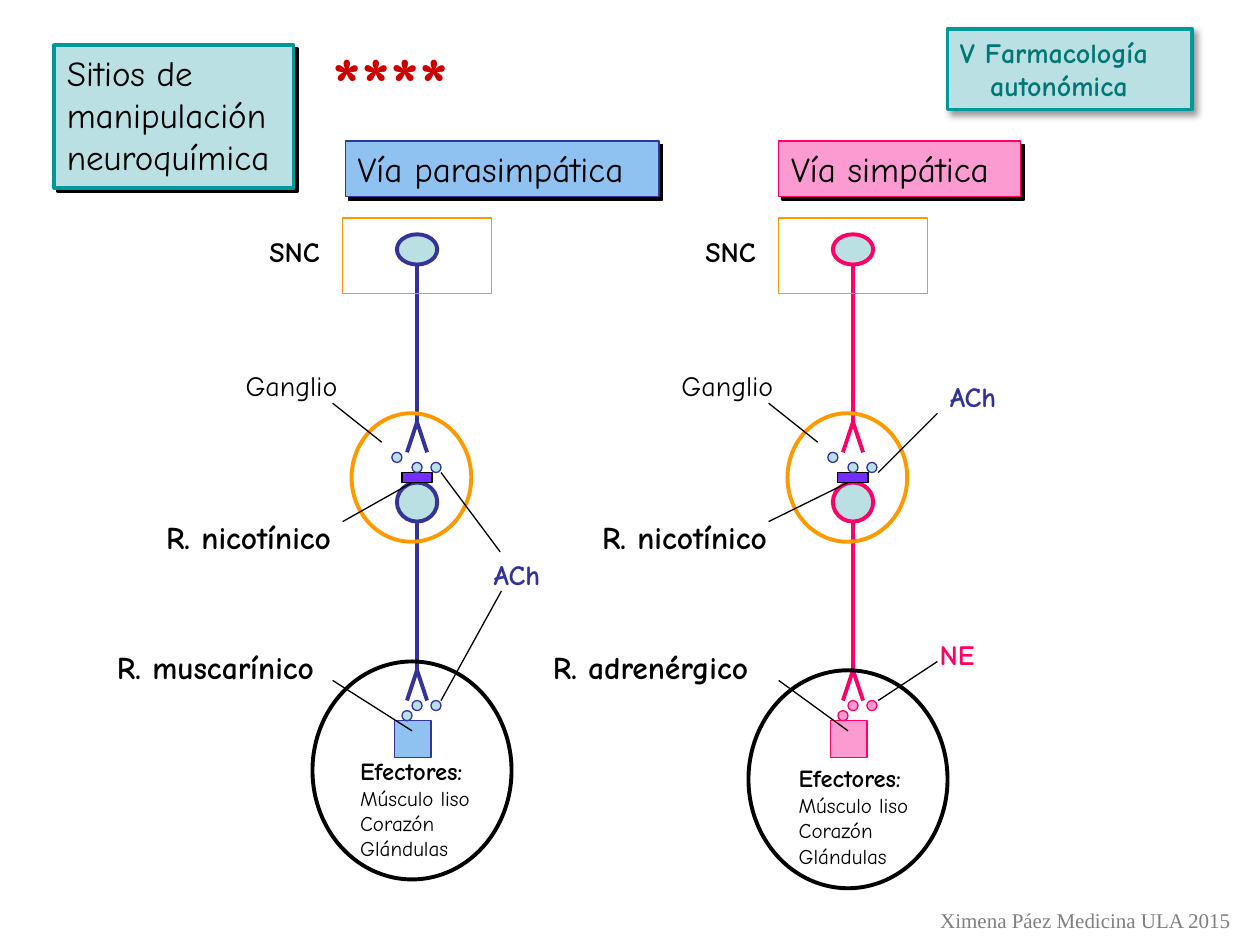
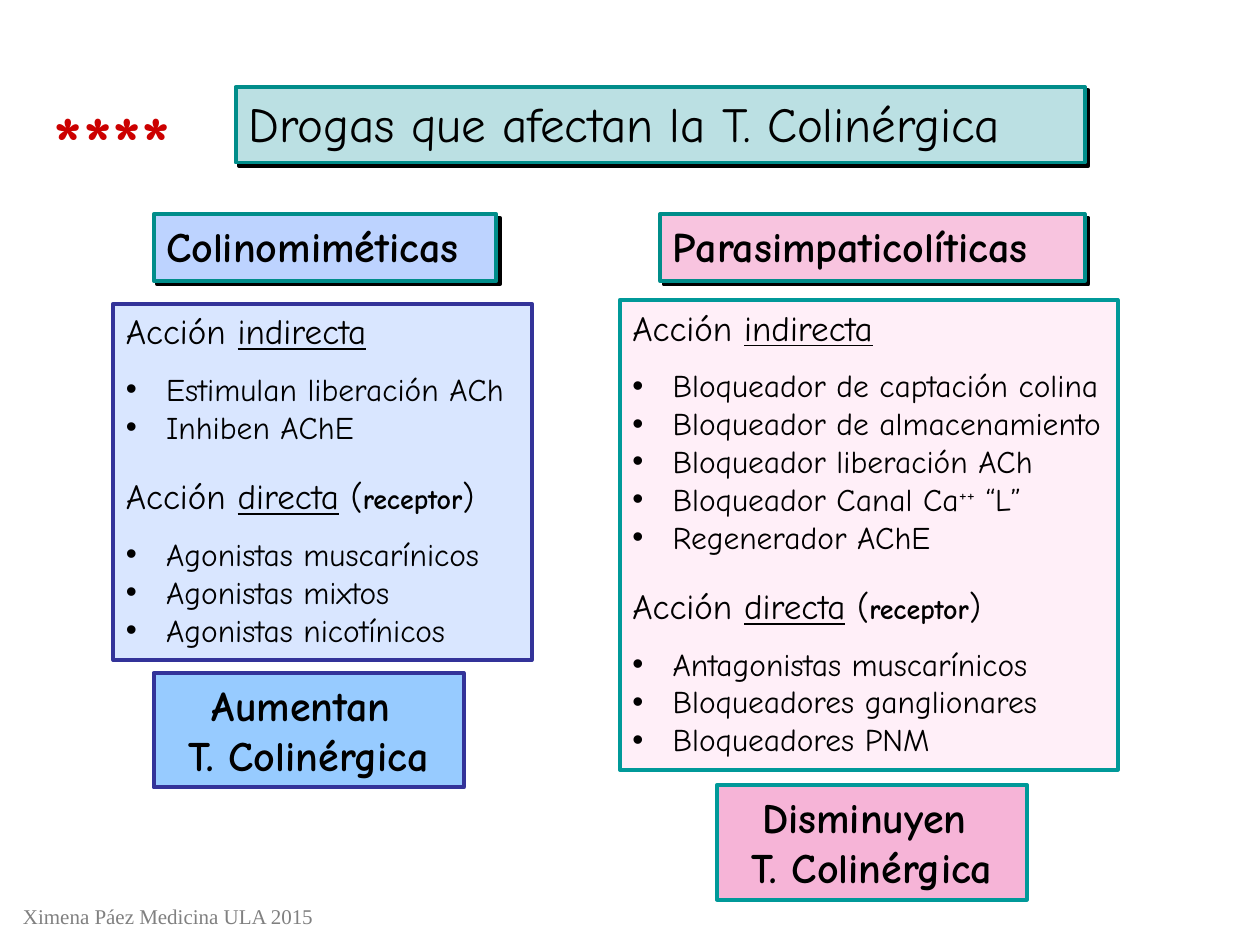
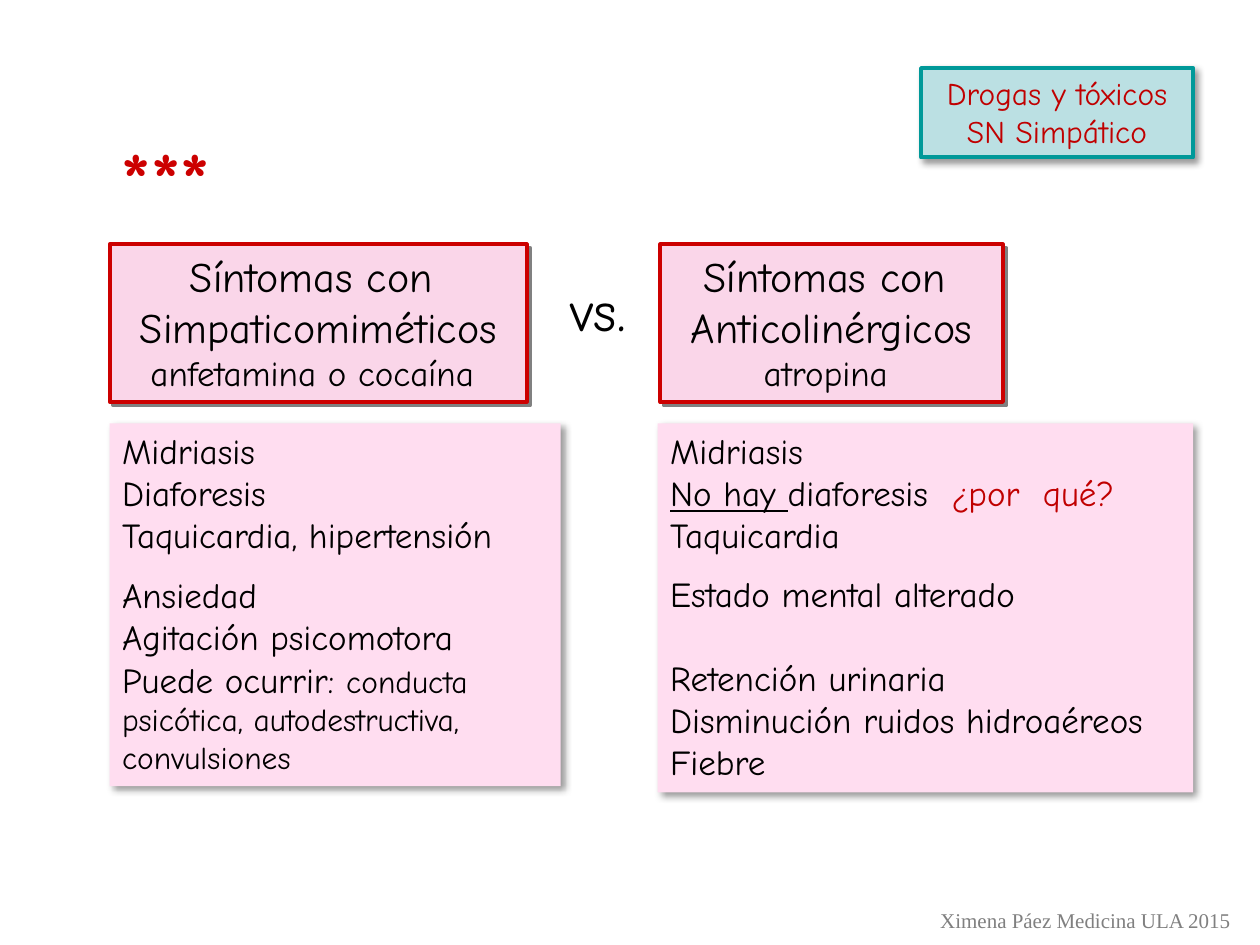
"""Build three slides on autonomic pathways and the drugs that act on them."""
from dataclasses import dataclass

from lxml import etree
from pptx import Presentation
from pptx.dml.color import RGBColor
from pptx.enum.shapes import MSO_CONNECTOR, MSO_SHAPE
from pptx.enum.text import MSO_ANCHOR, MSO_AUTO_SIZE, PP_ALIGN
from pptx.oxml.ns import qn
from pptx.util import Inches, Pt

BLACK = RGBColor(0x00, 0x00, 0x00)
GRAY = RGBColor(0x80, 0x80, 0x80)
RED = RGBColor(0xCC, 0x00, 0x00)
DARK_RED = RGBColor(0xC0, 0x00, 0x00)
TEAL = RGBColor(0x00, 0x99, 0x99)
DEEP_TEAL = RGBColor(0x00, 0x8D, 0x8A)
TEXT_TEAL = RGBColor(0x00, 0x77, 0x74)
PALE_TEAL = RGBColor(0xBB, 0xE0, 0xE3)
NAVY = RGBColor(0x33, 0x33, 0x99)
ORANGE = RGBColor(0xFF, 0x99, 0x00)
VIOLET = RGBColor(0x73, 0x2D, 0xFF)
MAGENTA = RGBColor(0xFF, 0x00, 0x66)
SKY = RGBColor(0x8F, 0xC2, 0xF1)
ROSE = RGBColor(0xFC, 0x9A, 0xD2)
PALE_ROSE = RGBColor(0xFA, 0xD6, 0xE9)
BLUSH = RGBColor(0xFF, 0xDD, 0xF0)

BODY_FONT = "Comic Neue"
FOOTER_FONT = "Times New Roman"
FOOTER = "Ximena Páez Medicina ULA 2015"
FOOTER_RIGHT = (7.35, 7.15, 2.53, 0.3)
FOOTER_LEFT = (0.07, 7.12, 2.53, 0.3)
THICK, THIN = 2.25, 0.75
HARD = (BLACK, 100, 0, 2.8)
HARD_GRAY = (GRAY, 100, 0, 2.8)
SOFT = (BLACK, 40, 4, 3)


@dataclass
class Line:
    """A paragraph: spans of text with their format, space before and indent."""
    spans: list
    gap: float = 0
    indent: float = 0
    bullet: bool = False


PATHWAYS = [
    dict(axis=3.31, color=NAVY, tint=SKY, transmitter=PALE_TEAL,
         heading="Vía parasimpática", heading_at=(2.74, 1.12, 2.49, 0.44),
         effector_top=5.25, list_at=(-0.55, 5.95),
         receptor="R. muscarínico", receptor_width=1.98,
         labels=[("ACh", NAVY, 0.51, 4.38)],
         leaders=[(-0.59, 4.14, -0.04, 3.83), (-0.67, 5.4, -0.04, 5.8),
                  (0.66, 4.38, 0.19, 3.75), (0.67, 4.69, 0.19, 5.56)]),
    dict(axis=6.77, color=MAGENTA, tint=ROSE, transmitter=ROSE,
         heading="Vía simpática", heading_at=(6.18, 1.12, 1.92, 0.44),
         effector_top=5.32, list_at=(-0.53, 6.01),
         receptor="R. adrenérgico", receptor_width=1.98,
         labels=[("ACh", NAVY, 0.67, 2.96), ("NE", MAGENTA, 0.59, 5.01)],
         leaders=[(-0.67, 4.14, -0.04, 3.83), (-0.59, 5.4, -0.04, 5.8),
                  (0.67, 3.28, 0.2, 3.75), (0.67, 5.25, 0.2, 5.56)]),
]
GANGLION_DOTS = [(-0.04, 3.67), (0.11, 3.67), (-0.2, 3.59)]
EFFECTOR_DOTS = [(0.11, 5.56), (-0.04, 5.56), (-0.12, 5.64)]
EFFECTORS = [Line([("Efectores:", dict(size=14, bold=True))]),
             "Músculo liso", "Corazón", "Glándulas"]

DRUG_GROUPS = [
    dict(name="Colinomiméticas", name_at=(1.22, 1.7, 2.72, 0.53),
         name_fill=RGBColor(0xBD, 0xD3, 0xFF),
         list_at=(0.9, 2.41, 3.32, 2.83), list_fill=RGBColor(0xD9, 0xE6, 0xFF),
         outline=NAVY, effect="Aumentan ", effect_at=(1.22, 5.34, 2.46, 0.91),
         effect_fill=RGBColor(0x97, 0xCB, 0xFF),
         indirect=["Estimulan liberación ACh", "Inhiben AChE"],
         direct=["Agonistas muscarínicos", "Agonistas mixtos",
                 "Agonistas nicotínicos"]),
    dict(name="Parasimpaticolíticas", name_at=(5.24, 1.7, 3.37, 0.53),
         name_fill=RGBColor(0xF8, 0xC4, 0xDF),
         list_at=(4.92, 2.38, 3.95, 3.73), list_fill=RGBColor(0xFF, 0xEF, 0xF8),
         outline=TEAL, effect="Disminuyen ", effect_at=(5.69, 6.23, 2.46, 0.91),
         effect_fill=RGBColor(0xF6, 0xB4, 0xD7),
         indirect=["Bloqueador de captación colina",
                   "Bloqueador de almacenamiento",
                   "Bloqueador liberación ACh",
                   "Bloqueador Canal Ca++ “L”", "Regenerador AChE"],
         direct=["Antagonistas muscarínicos", "Bloqueadores ganglionares",
                 "Bloqueadores PNM"]),
]

SYMPTOM_GROUPS = [
    dict(drug="Simpaticomiméticos", example="anfetamina o cocaína ",
         head_at=(0.87, 1.94, 3.31, 1.25), list_at=(0.87, 3.36, 3.58, 2.88),
         symptoms=["Midriasis", "Diaforesis", "Taquicardia, hipertensión",
                   Line([("Ansiedad", {})], gap=10.5), "Agitación psicomotora",
                   Line([("Puede ocurrir: ", {}),
                         ("conducta psicótica, autodestructiva, convulsiones",
                          dict(size=18))])]),
    dict(drug="Anticolinérgicos", example="atropina ",
         head_at=(5.24, 1.94, 2.72, 1.25), list_at=(5.22, 3.36, 4.25, 2.93),
         symptoms=["Midriasis",
                   Line([("No hay ", dict(underline=True)), ("diaforesis  ", {}),
                         ("¿por  qué?", dict(color=DARK_RED))]),
                   "Taquicardia",
                   Line([("Estado mental alterado", {})], gap=9.5),
                   Line([("Retención urinaria", {})], gap=24),
                   "Disminución ruidos hidroaéreos", "Fiebre"]),
]


def add_shadow(parent, color, opacity, blur, distance):
    """Cast a shadow to the lower right from an effect list."""
    shadow = etree.SubElement(parent, qn("a:outerShdw"), blurRad=str(Pt(blur)),
                              dist=str(Pt(distance)), dir="2700000",
                              algn="ctr", rotWithShape="0")
    tone = etree.SubElement(shadow, qn("a:srgbClr"), val=str(color))
    etree.SubElement(tone, qn("a:alpha"), val=str(opacity * 1000))


def paint(shape, fill=None, outline=None, weight=THIN, shadow=None):
    """Set fill, outline and shadow of a shape."""
    shape.shadow.inherit = False
    if fill is None:
        shape.fill.background()
    else:
        shape.fill.solid()
        shape.fill.fore_color.rgb = fill
    if outline is None:
        shape.line.fill.background()
    else:
        shape.line.color.rgb = outline
        shape.line.width = Pt(weight)
    if shadow:
        add_shadow(shape._element.spPr.find(qn("a:effectLst")), *shadow)


def add_span(para, text, size, color=BLACK, bold=False, underline=False,
             raised=False, font=BODY_FONT):
    """Add one formatted run."""
    span = para.add_run()
    span.text = text
    span.font.name = font
    span.font.size = Pt(size)
    span.font.bold = bold
    span.font.color.rgb = color
    if underline:
        span.font.underline = True
    if raised:
        span.font._element.set("baseline", "30000")
    return span


def write(shape, lines, align=PP_ALIGN.LEFT, **style):
    """Write lines into a shape, each line a string or a Line."""
    frame = shape.text_frame
    frame.word_wrap = True
    frame.auto_size = MSO_AUTO_SIZE.NONE
    frame.vertical_anchor = MSO_ANCHOR.TOP
    for index, line in enumerate(lines):
        if isinstance(line, str):
            line = Line([(line, {})])
        para = frame.add_paragraph() if index else frame.paragraphs[0]
        para.alignment = align
        para.space_before = Pt(line.gap)
        if line.indent:
            properties = para._p.get_or_add_pPr()
            properties.set("marL", str(Inches(line.indent)))
            if line.bullet:
                properties.set("indent", str(-Inches(line.indent)))
                etree.SubElement(properties, qn("a:buFont"), typeface="Arial")
                etree.SubElement(properties, qn("a:buChar"), char="•")
        for text, changes in line.spans:
            add_span(para, text, **{**style, **changes})


def add_figure(page, kind, at, **look):
    """Add a painted preset shape."""
    shape = page.shapes.add_shape(kind, *map(Inches, at))
    paint(shape, **look)
    return shape


def add_box(page, at, lines, fill, outline=None, shadow=None, weight=THICK,
            **style):
    """Add a filled rectangle with text."""
    box = add_figure(page, MSO_SHAPE.RECTANGLE, at, fill=fill, outline=outline,
                     weight=weight, shadow=shadow)
    write(box, lines, **style)


def add_label(page, at, lines, **style):
    """Add plain text."""
    label = page.shapes.add_textbox(*map(Inches, at))
    write(label, lines, **style)
    return label


def add_line(page, start, end, color=BLACK, weight=THIN):
    """Add a straight line between two points."""
    line = page.shapes.add_connector(MSO_CONNECTOR.STRAIGHT,
                                     *map(Inches, start + end))
    line.line.color.rgb = color
    line.line.width = Pt(weight)
    etree.SubElement(line._element.spPr, qn("a:effectLst"))


def add_page(deck, title, title_at, outline, shadow, stars, stars_at, footer_at,
             **style):
    """Add a slide with its title box, star rating and footer."""
    page = deck.slides.add_slide(deck.slide_layouts[5])
    heading = page.shapes.title
    heading.left, heading.top, heading.width, heading.height = map(Inches, title_at)
    paint(heading, PALE_TEAL, outline, THICK, shadow)
    write(heading, title, **style)
    rating = add_label(page, stars_at, ["*" * stars], size=44, color=RED, bold=True)
    font = rating.text_frame.paragraphs[0].runs[0].font._element
    effects = etree.Element(qn("a:effectLst"))
    font.find(qn("a:solidFill")).addnext(effects)
    add_shadow(effects, GRAY, 100, 0, 2.8)
    add_label(page, footer_at, [FOOTER], align=PP_ALIGN.CENTER, size=12,
              color=GRAY, font=FOOTER_FONT)
    return page


def draw_pathway(page, axis, color, tint, transmitter, heading, heading_at,
                 effector_top, list_at, receptor, receptor_width, labels, leaders):
    """Draw a two-neuron pathway around a vertical axis."""
    oval, block = MSO_SHAPE.OVAL, MSO_SHAPE.RECTANGLE
    nerve = dict(outline=color, weight=THICK)
    add_box(page, heading_at, [heading], tint, color, HARD, THIN, size=20)
    for top, height, end, tip in [(1.86, 0.24, 3.35, 3.59), (3.83, 0.31, 5.32, 5.56)]:
        add_figure(page, oval, (axis - 0.16, top, 0.32, height),
                   fill=PALE_TEAL, **nerve)
        add_line(page, (axis, top + height), (axis, end), color, THICK)
        for side in (-0.08, 0.08):
            add_line(page, (axis, end), (axis + side, tip), color, THICK)
    add_figure(page, oval, (axis - 0.52, 3.28, 0.95, 1.02),
               outline=ORANGE, weight=THICK)
    add_figure(page, oval, (axis - 0.83, effector_top, 1.58, 1.73),
               outline=BLACK, weight=THICK)
    add_figure(page, block, (axis - 0.18, 5.72, 0.29, 0.29), fill=tint, outline=color)
    add_figure(page, block, (axis - 0.12, 3.75, 0.24, 0.08),
               fill=VIOLET, outline=BLACK)
    for dots, fill, outline in [(GANGLION_DOTS, PALE_TEAL, NAVY),
                                (EFFECTOR_DOTS, transmitter, color)]:
        for offset, top in dots:
            add_figure(page, oval, (axis + offset, top, 0.08, 0.08),
                       fill=fill, outline=outline)
    add_figure(page, block, (axis - 0.59, 1.73, 1.18, 0.6), outline=ORANGE)
    add_label(page, (axis + list_at[0], list_at[1], 1.22, 0.94), EFFECTORS, size=12)
    for text, offset, top, width, size, bold in [
            ("SNC", -1.27, 1.81, 0.67, 16, True),
            ("Ganglio", -1.46, 2.88, 0.98, 16, False),
            ("R. nicotínico", -2.09, 4.06, 1.68, 18, True),
            (receptor, -2.48, 5.09, receptor_width, 18, True)]:
        add_label(page, (axis + offset, top, width, 0.4), [text], size=size, bold=bold)
    for text, tone, offset, top in labels:
        add_label(page, (axis + offset, top, 0.63, 0.37), [text],
                  size=16, color=tone, bold=True)
    for x1, y1, x2, y2 in [(-0.67, 3.2, -0.28, 3.51)] + leaders:
        add_line(page, (axis + x1, y1), (axis + x2, y2))


def bullet_lines(items):
    """Turn drug names into bullets, raising an ion charge."""
    lines = []
    for index, item in enumerate(items):
        start, charge, rest = item.partition("++")
        spans = [(start, {}), (charge, dict(raised=True)), (rest, {})]
        lines.append(Line([span for span in spans if span[0]],
                          0 if index else 10.5, 0.32, True))
    return lines


def action_lines(indirect, direct):
    """List indirect and direct actions under their headings."""
    large = dict(size=20)
    underlined = dict(size=20, underline=True)
    return [Line([("Acción ", large), ("indirecta", underlined)]),
            *bullet_lines(indirect),
            Line([("Acción ", large), ("directa", underlined), (" (", large),
                  ("receptor", dict(size=16, bold=True)), (")", large)], gap=16.5),
            *bullet_lines(direct)]


def build_pathways(deck):
    """Slide on the sites of neurochemical manipulation."""
    page = add_page(deck, ["Sitios de", "manipulación", "neuroquímica"],
                    (0.43, 0.36, 1.9, 1.13), TEAL, HARD, 4,
                    (2.54, 0.23, 1.51, 0.84), FOOTER_RIGHT, size=20)
    add_box(page, (7.52, 0.23, 1.94, 0.64),
            ["V Farmacología", Line([("autonómica", {})], indent=0.24)],
            PALE_TEAL, TEAL, SOFT, size=16, color=TEXT_TEAL, bold=True)
    for pathway in PATHWAYS:
        draw_pathway(page, **pathway)


def build_drugs(deck):
    """Slide on drugs of cholinergic transmission."""
    page = add_page(deck, ["Drogas que afectan la T. Colinérgica"],
                    (1.87, 0.69, 6.74, 0.6), DEEP_TEAL, HARD, 4,
                    (0.33, 0.7, 1.51, 0.84), FOOTER_LEFT, size=28)
    for group in DRUG_GROUPS:
        add_box(page, group["list_at"],
                action_lines(group["indirect"], group["direct"]),
                group["list_fill"], group["outline"], size=18)
        add_box(page, group["effect_at"], [group["effect"], "T. Colinérgica"],
                group["effect_fill"], group["outline"], align=PP_ALIGN.CENTER,
                size=24, bold=True)
        add_box(page, group["name_at"], [group["name"]], group["name_fill"],
                DEEP_TEAL, HARD, size=24, bold=True)


def build_symptoms(deck):
    """Slide comparing the symptoms of two drug groups."""
    page = add_page(deck, ["Drogas y tóxicos", "SN Simpático"],
                    (7.31, 0.54, 2.16, 0.71), TEAL, SOFT, 3,
                    (0.87, 0.99, 1.17, 0.83), FOOTER_RIGHT,
                    align=PP_ALIGN.CENTER, size=18, color=DARK_RED)
    for group in SYMPTOM_GROUPS:
        add_box(page, group["head_at"],
                ["Síntomas con ", group["drug"],
                 Line([(group["example"], dict(size=20))])],
                PALE_ROSE, RED, HARD_GRAY, align=PP_ALIGN.CENTER, size=24)
        add_box(page, group["list_at"], group["symptoms"], BLUSH, shadow=SOFT, size=20)
    add_label(page, (4.43, 2.14, 0.75, 0.64), ["vs."], size=32)


def main():
    """Build and save the deck."""
    deck = Presentation()
    deck.slide_width, deck.slide_height = Inches(10), Inches(7.5)
    build_pathways(deck)
    build_drugs(deck)
    build_symptoms(deck)
    deck.save("out.pptx")


if __name__ == "__main__":
    main()
